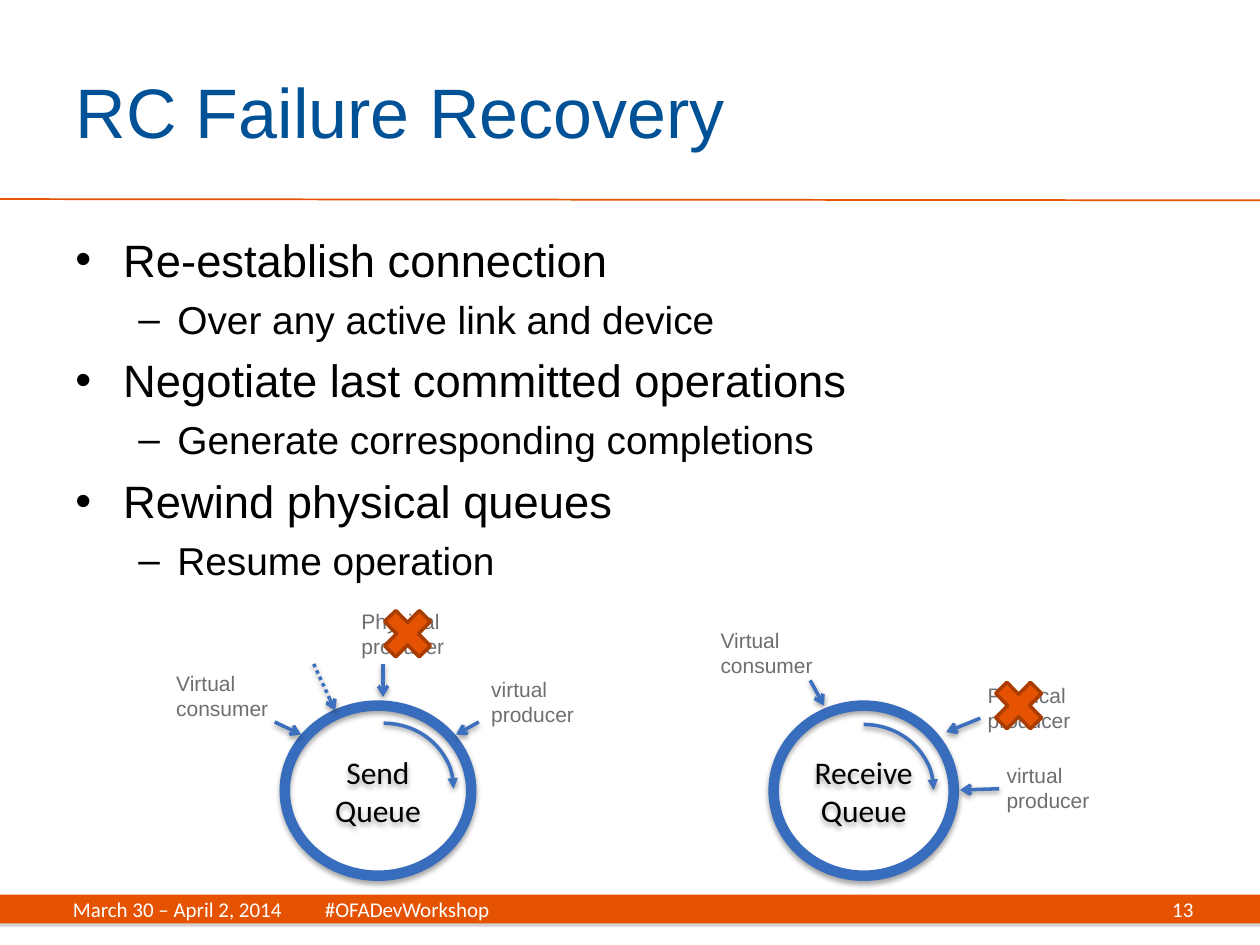
from lxml import etree
from pptx import Presentation
from pptx.dml.color import RGBColor
from pptx.enum.dml import MSO_LINE
from pptx.enum.shapes import MSO_CONNECTOR, MSO_SHAPE
from pptx.enum.text import MSO_ANCHOR, PP_ALIGN
from pptx.oxml.ns import qn
from pptx.util import Inches, Pt

STRAIGHT = MSO_CONNECTOR.STRAIGHT
RECTANGLE, OVAL = MSO_SHAPE.RECTANGLE, MSO_SHAPE.OVAL
ARC, CROSS = MSO_SHAPE.ARC, MSO_SHAPE.MATH_MULTIPLY
MIDDLE, TOP = MSO_ANCHOR.MIDDLE, MSO_ANCHOR.TOP
LEFT, CENTER, RIGHT = PP_ALIGN.LEFT, PP_ALIGN.CENTER, PP_ALIGN.RIGHT
DOTTED = MSO_LINE.ROUND_DOT

ORANGE = RGBColor(0xE5, 0x53, 0x02)
DARK_ORANGE = RGBColor(0xA9, 0x3D, 0x01)
NAVY = RGBColor(0x00, 0x51, 0x95)
RING_BLUE = RGBColor(0x38, 0x6C, 0xBC)
ARROW_BLUE = RGBColor(0x3C, 0x6F, 0xBD)
GRAY = RGBColor(0x6D, 0x6E, 0x71)
SHADE = RGBColor(0x80, 0x80, 0x80)
BLACK = RGBColor(0, 0, 0)
WHITE = RGBColor(0xFF, 0xFF, 0xFF)

WIDTH, HEIGHT = 10, 7.5
FOOTER_TOP, FOOTER_HEIGHT = 7.1, 0.23
RING_TOP, RING_HEIGHT = 5.6, 1.35
ARC_SIZE = (1.11, 1.04)
CROSS_SIZE = (0.53, 0.54)
LABEL_SIZE = (0.98, 0.5)

# Level: size, space before, left margin, hanging indent, bullet
LEVELS = (
    (25.9, 6, 0.38, -0.38, "•"),
    (22.2, 5.2, 0.81, -0.31, "–"),
)
OUTLINE = (
    (0, "Re-establish connection"),
    (1, "Over any active link and device"),
    (0, "Negotiate last committed operations"),
    (1, "Generate corresponding completions"),
    (0, "Rewind physical queues"),
    (1, "Resume operation"),
)
# Queue: lines, ring left, ring width, arc position
QUEUES = (
    (["Send Queue"], 2.26, 1.48, (2.49, 5.74)),
    (["Receive", "Queue"], 6.14, 1.43, (6.3, 5.75)),
)
LABELS = (
    (["virtual producer"], 3.8, 5.32),
    (["Virtual", "consumer"], 1.3, 5.27),
    (["Physical", "producer"], 2.77, 4.78),
    (["virtual producer"], 7.89, 6),
    (["Virtual", "consumer"], 5.62, 4.93),
    (["Physical", "producer"], 7.74, 5.37),
)
ARROWS = (
    ((3.8, 5.73), (3.62, 5.83)),
    ((2.18, 5.73), (2.39, 5.83)),
    ((3.04, 5.27), (3.04, 5.53)),
    ((7.93, 6.26), (7.62, 6.27)),
    ((6.43, 5.4), (6.54, 5.6)),
    ((7.78, 5.7), (7.51, 5.81)),
)
FAILED_AT = ((2.97, 4.76), (7.82, 5.33))


def inches(*lengths):
    return [Inches(length) for length in lengths]


def add_child(parent, tag, **attributes):
    values = {name: str(value) for name, value in attributes.items()}
    return etree.SubElement(parent, qn(tag), values)


def set_shadow(shape, color=None, alpha=0, blur=0, distance=0):
    """Replace inherited effects by one downward shadow, or by none."""
    effects = add_child(shape._element.spPr, "a:effectLst")
    if color is not None:
        shadow = add_child(effects, "a:outerShdw", blurRad=Pt(blur), dist=Pt(distance),
                           dir=90 * 60000, rotWithShape=0)
        shade = add_child(shadow, "a:srgbClr", val=color)
        add_child(shade, "a:alpha", val=alpha * 1000)


def set_line(shape, color, width, tail=None, dash=None):
    shape.line.color.rgb = color
    shape.line.width = Pt(width)
    if dash is not None:
        shape.line.dash_style = dash
    if tail:
        add_child(shape.line._ln, "a:tailEnd", type=tail)


def set_font(para, name, size, color):
    for span in para.runs:
        span.font.name = name
        span.font.size = Pt(size)
        span.font.color.rgb = color


def write(shape, lines, font, size, color, align=LEFT, anchor=TOP):
    frame = shape.text_frame
    frame.word_wrap = True
    frame.vertical_anchor = anchor
    frame.text = "\n".join(lines)
    for para in frame.paragraphs:
        para.alignment = align
        set_font(para, font, size, color)


def add_shape(page, kind, place, fill=None):
    shape = page.shapes.add_shape(kind, *inches(*place))
    if fill is None:
        shape.fill.background()
    else:
        shape.fill.solid()
        shape.fill.fore_color.rgb = fill
    return shape


def add_line(page, start, end, color, width, tail=None, dash=None):
    line = page.shapes.add_connector(STRAIGHT, *inches(*start, *end))
    set_line(line, color, width, tail, dash)
    return line


def add_arrow(page, start, end, dash=None):
    arrow = add_line(page, start, end, ARROW_BLUE, 2, "arrow", dash)
    set_shadow(arrow, BLACK, 38, 3.1, 1.6)


def add_footer_text(page, left, width, text, align=LEFT, center_tab=None):
    box = page.shapes.add_textbox(*inches(left, FOOTER_TOP, width, FOOTER_HEIGHT))
    box.text_frame.margin_top = box.text_frame.margin_bottom = 0
    if center_tab:
        properties = box.text_frame.paragraphs[0]._p.get_or_add_pPr()
        tabs = add_child(properties, "a:tabLst")
        add_child(tabs, "a:tab", pos=Inches(center_tab), algn="ctr")
    write(box, [text], "Calibri", 12, WHITE, align, MIDDLE)


def add_frame(page):
    """Footer band, title rule, title and footer texts."""
    band = add_shape(page, RECTANGLE, (0, FOOTER_TOP, WIDTH, FOOTER_HEIGHT), ORANGE)
    band.line.fill.background()
    set_shadow(band, SHADE, 35, 0, 1.8)
    set_shadow(add_line(page, (0, 1.58), (WIDTH, 1.59), ORANGE, 1))

    title = page.shapes.title
    title.left, title.top, title.width, title.height = inches(0.5, 0.25, 8.17, 1.25)
    write(title, ["RC Failure Recovery"], "Arial", 40, NAVY, LEFT, MIDDLE)

    add_footer_text(page, 0.48, 9.05, "March 30 – April 2, 2014\t#OFADevWorkshop",
                    center_tab=4.51)
    add_footer_text(page, 8.38, 1.19, "13", RIGHT)


def add_outline(page):
    box = page.shapes.add_textbox(*inches(0.5, 1.75, 9, 2.89))
    frame = box.text_frame
    frame.word_wrap = True
    frame.margin_top = Inches(0.09)
    for index, (level, text) in enumerate(OUTLINE):
        size, space, margin, indent, bullet = LEVELS[level]
        para = frame.add_paragraph() if index else frame.paragraphs[0]
        para.text = text
        para.level = level
        properties = para._p.get_or_add_pPr()
        properties.set("marL", str(Inches(margin)))
        properties.set("indent", str(Inches(indent)))
        add_child(properties, "a:buFont", typeface="Arial")
        add_child(properties, "a:buChar", char=bullet)
        para.space_before = Pt(space if index else 0)
        set_font(para, "Arial", size, BLACK)


def add_queue(page, lines, left, width, arc_at):
    ring = add_shape(page, OVAL, (left, RING_TOP, width, RING_HEIGHT))
    set_line(ring, RING_BLUE, 6)
    set_shadow(ring, BLACK, 35, 3.1, 1.8)
    write(ring, lines, "Calibri", 18, BLACK, CENTER, MIDDLE)
    arc = add_shape(page, ARC, arc_at + ARC_SIZE)
    set_line(arc, ARROW_BLUE, 2, "triangle")
    set_shadow(arc, BLACK, 38, 3.1, 1.6)


def main():
    deck = Presentation()
    deck.slide_width, deck.slide_height = inches(WIDTH, HEIGHT)
    page = deck.slides.add_slide(deck.slide_layouts[5])
    add_frame(page)
    add_outline(page)

    # Queue diagrams
    for queue in QUEUES:
        add_queue(page, *queue)
    for lines, left, top in LABELS:
        label = page.shapes.add_textbox(*inches(left, top, *LABEL_SIZE))
        write(label, lines, "Arial", 12, GRAY)
    for start, end in ARROWS:
        add_arrow(page, start, end)
    add_arrow(page, (2.49, 5.27), (2.66, 5.64), DOTTED)

    # Crosses over the failed physical producers
    for place in FAILED_AT:
        cross = add_shape(page, CROSS, place + CROSS_SIZE, ORANGE)
        set_line(cross, DARK_ORANGE, 2)
        set_shadow(cross)

    deck.save("out.pptx")


if __name__ == "__main__":
    main()
